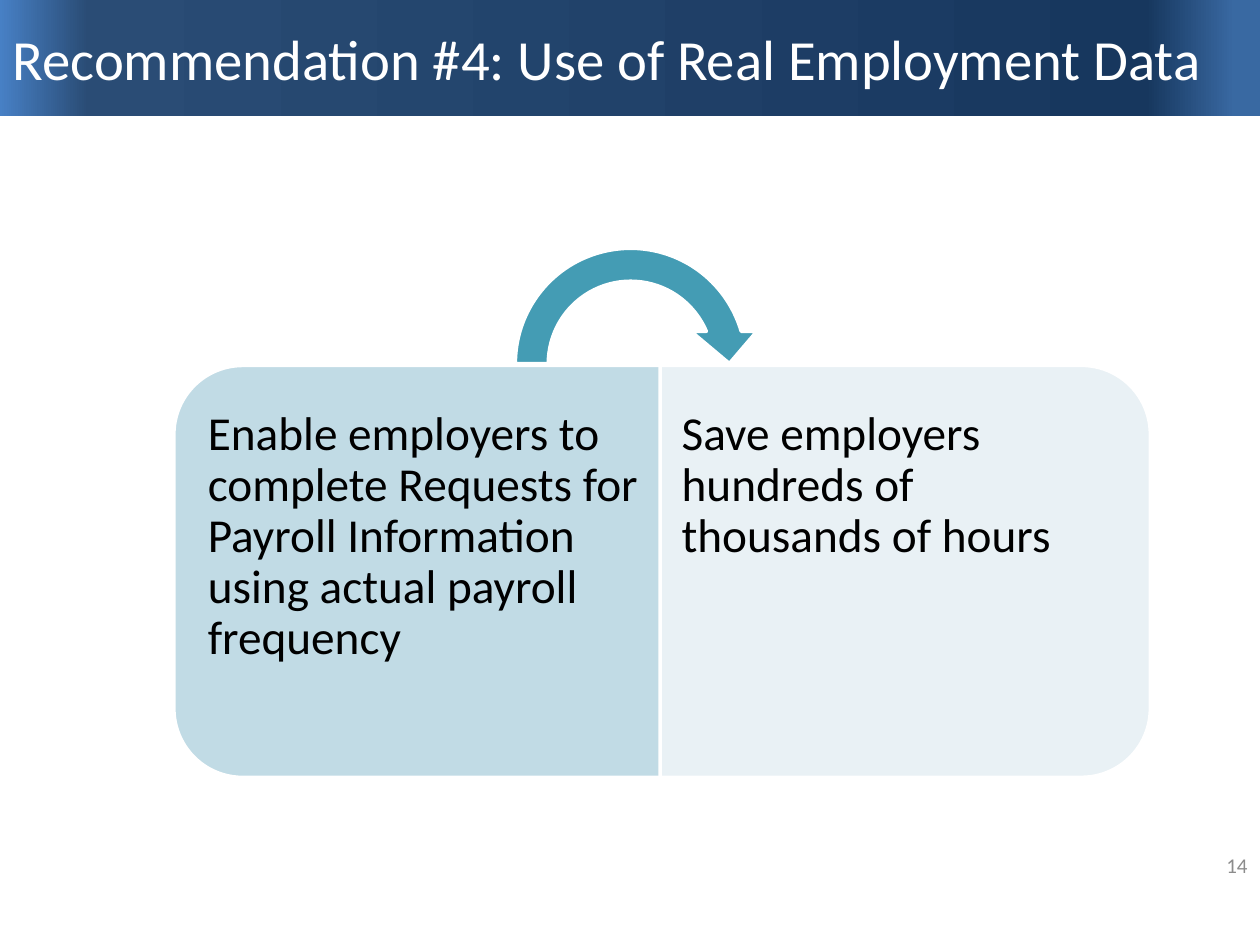
from pptx import Presentation
from pptx.dml.color import RGBColor
from pptx.enum.shapes import MSO_SHAPE
from pptx.enum.text import MSO_ANCHOR, PP_ALIGN
from pptx.oxml import parse_xml
from pptx.oxml.ns import nsdecls
from pptx.util import Inches, Pt

HUES = {"white": "FFFFFF", "black": "000000", "gray": "8C8C8C",
        "left": "C1DBE5", "right": "E9F1F5", "arrow": "449CB4"}
STOPS = [(0, "4780C5"), (7, "2A4C75"), (91, "17375E"), (98, "3969A2")]
WIDE, HIGH = 10, 7.5
CARD, TALL, TOP = 3.89, 3.27, 2.9
SLOPE = 0.16


def hue(name):
    return RGBColor.from_string(HUES[name])


def draw(slide, kind, box, fill, turn=0, adjust=()):
    shape = slide.shapes.add_shape(kind, *map(Inches, box))
    shape.shadow.inherit = False
    shape.rotation = turn
    for i, value in enumerate(adjust):
        shape.adjustments[i] = value
    shape.fill.solid()
    shape.fill.fore_color.rgb = hue(fill)
    shape.line.color.rgb = hue("white")
    shape.line.width = Pt(2)
    return shape


def write(frame, text, size, color, align=PP_ALIGN.LEFT):
    frame.word_wrap = True
    para = frame.paragraphs[0]
    para.alignment = align
    run = para.add_run()
    run.text = text
    run.font.size = Pt(size)
    run.font.name = "Calibri"
    run.font.color.rgb = hue(color)
    return para


def label(slide, box, *style):
    frame = slide.shapes.add_textbox(*map(Inches, box)).text_frame
    return frame, write(frame, *style)


def header(slide, box, text):
    bar = draw(slide, MSO_SHAPE.RECTANGLE, box, "white")
    bar.line.fill.background()
    bar.fill.gradient()
    bar.fill.gradient_angle = 0
    stops = bar.fill._fill._gradFill.gsLst
    for old in list(stops):
        stops.remove(old)
    for spot, color in STOPS:
        stops.append(parse_xml(
            f'<a:gs {nsdecls("a")} pos="{spot * 1000}">'
            f'<a:srgbClr val="{color}"/></a:gs>'))
    title = slide.shapes.title
    title.left, title.top, title.width, title.height = map(Inches, box)
    title.text_frame.vertical_anchor = MSO_ANCHOR.MIDDLE
    write(title.text_frame, text, 32.4, "white")
    bar._element.addnext(title._element)


def card(slide, box, text, fill, turn, shift, pads):
    x, y, w, h = box
    turned = (x + (w - h) / 2, y + (h - w) / 2, h, w)
    draw(slide, MSO_SHAPE.ROUND_2_SAME_RECTANGLE, turned, fill, turn, (0.167, 0))
    inner = (x + shift, y + SLOPE, w - SLOPE, h - 2 * SLOPE)
    frame, para = label(slide, inner, text, 27, "black")
    frame.margin_left, frame.margin_right = map(Inches, pads)
    frame.margin_top = frame.margin_bottom = Inches(0.19)
    para.line_spacing = 0.9


def number(slide, box, text):
    frame, para = label(slide, box, text, 12, "gray", PP_ALIGN.RIGHT)
    frame.vertical_anchor = MSO_ANCHOR.MIDDLE


def main():
    deck = Presentation()
    deck.slide_width, deck.slide_height = Inches(WIDE), Inches(HIGH)
    slide = deck.slides.add_slide(deck.slide_layouts[5])
    header(slide, (0, 0, WIDE, 0.92),
           "Recommendation #4: Use of Real Employment Data")
    number(slide, (7.67, 6.67, 2.33, 0.4), "14")
    left = 1.38
    card(slide, (left, TOP, CARD, TALL),
         "Enable employers to complete Requests for Payroll Information "
         "using actual payroll frequency", "left", 270, SLOPE, (0.11, 0.17))
    card(slide, (left + CARD - 0.03, TOP, CARD, TALL),
         "Save employers hundreds of thousands of hours",
         "right", 90, 0, (0.17, 0.11))
    draw(slide, MSO_SHAPE.CIRCULAR_ARROW, (3.96, 1.84, 2.09, 2.09), "arrow",
         adjust=(0.125, 11.42, 204.58, 108, 0.125))
    deck.save("out.pptx")


if __name__ == "__main__":
    main()
